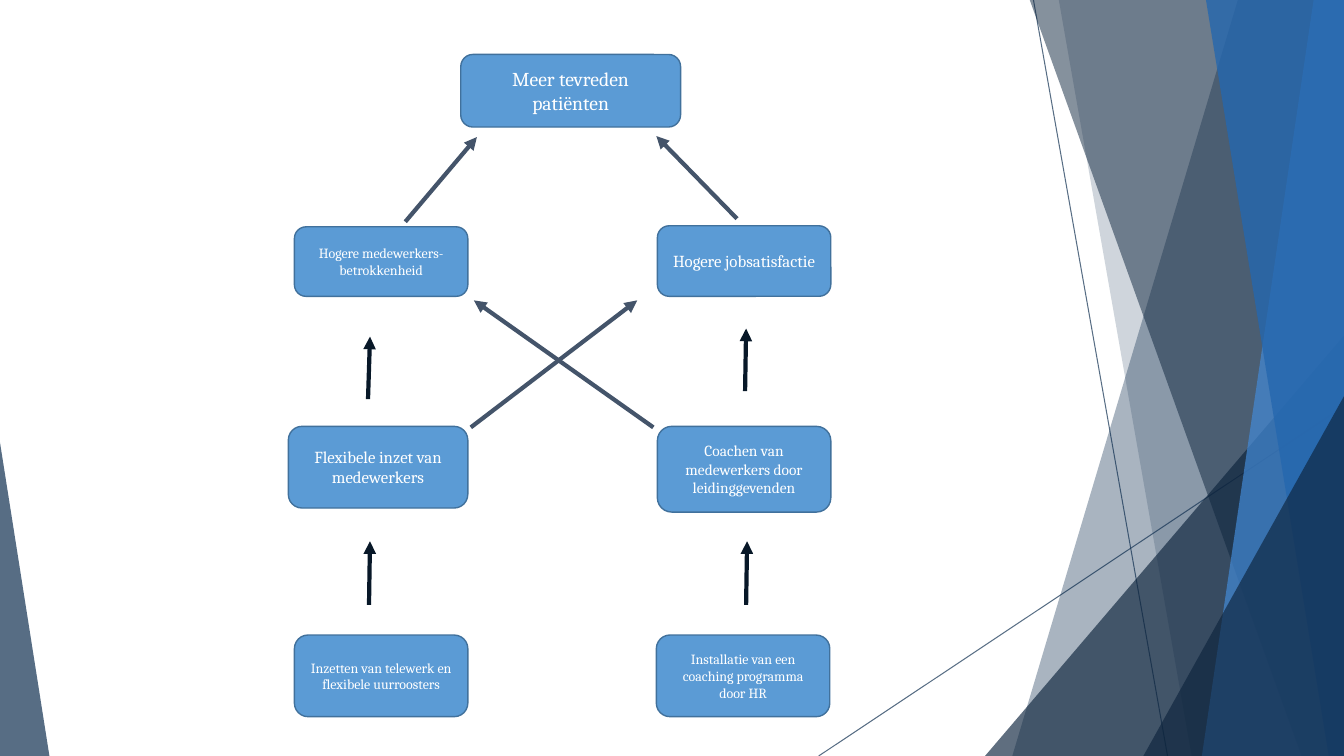
from lxml import etree
from pptx import Presentation
from pptx.dml.color import RGBColor
from pptx.enum.shapes import MSO_CONNECTOR, MSO_SHAPE
from pptx.enum.text import MSO_ANCHOR, PP_ALIGN
from pptx.oxml.ns import qn
from pptx.util import Inches, Pt

ROUNDED = MSO_SHAPE.ROUNDED_RECTANGLE
TRIANGLE = MSO_SHAPE.ISOSCELES_TRIANGLE
STRAIGHT = MSO_CONNECTOR.STRAIGHT
MIDDLE = MSO_ANCHOR.MIDDLE
CENTER = PP_ALIGN.CENTER

WIDTH, HEIGHT = 13.33, 7.5
THEME = {
    "font": "Cambria", "text": "FFFFFF",
    "box": "5B9BD5", "box_line": "41719C", "box_weight": 1,
    "diagonal": "44546A", "upright": "081828", "arrow_weight": 3,
    "slate": "113051", "navy": "0D243D", "sky": "438AD7", "blue": "2567AE",
    "hairline": 0.75, "hairline_alpha": 70,
    "large": 14, "medium": 12, "small": 11, "tiny": 10,
}

# text, size, left, top, width, height
BOXES = [
    ("Meer tevreden patiënten", "large", 4.57, 0.54, 2.18, 0.72),
    ("Hogere medewerkers-betrokkenheid", "tiny", 2.92, 2.25, 1.72, 0.69),
    ("Hogere jobsatisfactie", "medium", 6.52, 2.24, 1.72, 0.7),
    ("Flexibele inzet van medewerkers", "medium", 2.86, 4.23, 1.78, 0.81),
    ("Coachen van medewerkers door leidinggevenden", "small", 6.52, 4.23, 1.72, 0.85),
    ("Inzetten van telewerk en flexibele uurroosters", "tiny", 2.92, 6.3, 1.72, 0.81),
    ("Installatie van een coaching programma door HR", "tiny", 6.51, 6.3, 1.72, 0.81),
]

# colour, start, end
ARROWS = [
    ("diagonal", (4.02, 2.2), (4.73, 1.36)),
    ("diagonal", (7.31, 2.17), (6.51, 1.35)),
    ("diagonal", (4.67, 4.24), (6.32, 2.98)),
    ("diagonal", (6.48, 4.24), (4.7, 2.98)),
    ("upright", (3.65, 3.96), (3.67, 3.34)),
    ("upright", (7.39, 3.88), (7.4, 3.26)),
    ("upright", (3.66, 6), (3.67, 5.37)),
    ("upright", (7.4, 6), (7.41, 5.37)),
]

HAIRLINES = [((10.25, 0), (11.58, HEIGHT)), ((WIDTH, 4.03), (8.12, HEIGHT))]

# Back to front. A band runs to the right edge: colour, alpha, top x, bottom x.
# A wedge stands on the bottom edge: colour, alpha, left, top, width, apex.
BANDS_BACK = [("slate", 36, 12.28, 10.04), ("slate", 20, 10.5, 11.82)]
WEDGE_BACK = ("navy", 66, 9.77, 3.33, 3.56, 1)
BANDS_FRONT = [
    ("navy", 50, 10.21, 12.91),
    ("sky", 70, 13.03, 11.92),
    ("blue", 80, 11.96, 13.18),
]
WEDGES_FRONT = [("navy", 66, 11.34, 3.93, 1.99, 1), ("slate", 70, 0, 4.39, 0.49, 0)]


def rgb(name):
    return RGBColor.from_string(THEME[name])


def set_alpha(element, percent):
    """Make the first solid colour below element partly transparent."""
    colour = element.find(".//" + qn("a:srgbClr"))
    etree.SubElement(colour, qn("a:alpha"), val=str(percent * 1000))


def paint_panel(panel, colour, alpha):
    panel.shadow.inherit = False
    panel.fill.solid()
    panel.fill.fore_color.rgb = rgb(colour)
    panel.line.fill.background()
    set_alpha(panel.fill._xPr, alpha)


def add_band(shapes, colour, alpha, top_x, bottom_x):
    corners = [(top_x, -0.01), (WIDTH, -0.01), (WIDTH, HEIGHT), (bottom_x, HEIGHT)]
    points = [(Inches(x), Inches(y)) for x, y in corners]
    outline = shapes.build_freeform(*points[0])
    outline.add_line_segments(points[1:], close=True)
    paint_panel(outline.convert_to_shape(), colour, alpha)


def add_wedge(shapes, colour, alpha, left, top, width, apex):
    wedge = shapes.add_shape(
        TRIANGLE, Inches(left), Inches(top), Inches(width), Inches(HEIGHT - top))
    wedge.adjustments[0] = apex
    paint_panel(wedge, colour, alpha)


def add_line(shapes, start, end, colour, weight):
    line = shapes.add_connector(STRAIGHT, *(Inches(v) for v in (*start, *end)))
    line.line.color.rgb = rgb(colour)
    line.line.width = Pt(weight)
    etree.SubElement(line._element.spPr, qn("a:effectLst"))
    return line.line._get_or_add_ln()


def add_box(shapes, text, size, *frame):
    box = shapes.add_shape(ROUNDED, *(Inches(v) for v in frame))
    box.shadow.inherit = False
    box.fill.solid()
    box.fill.fore_color.rgb = rgb("box")
    box.line.color.rgb = rgb("box_line")
    box.line.width = Pt(THEME["box_weight"])
    box.text_frame.text = text
    box.text_frame.word_wrap = True
    box.text_frame.vertical_anchor = MIDDLE
    paragraph = box.text_frame.paragraphs[0]
    paragraph.alignment = CENTER
    font = paragraph.runs[0].font
    font.name = THEME["font"]
    font.size = Pt(THEME[size])
    font.color.rgb = rgb("text")


def main():
    deck = Presentation()
    deck.slide_width, deck.slide_height = Inches(WIDTH), Inches(HEIGHT)
    shapes = deck.slides.add_slide(deck.slide_layouts[6]).shapes

    for start, end in HAIRLINES:
        ln = add_line(shapes, start, end, "slate", THEME["hairline"])
        set_alpha(ln, THEME["hairline_alpha"])
    for band in BANDS_BACK:
        add_band(shapes, *band)
    add_wedge(shapes, *WEDGE_BACK)
    for band in BANDS_FRONT:
        add_band(shapes, *band)
    for wedge in WEDGES_FRONT:
        add_wedge(shapes, *wedge)

    for box in BOXES:
        add_box(shapes, *box)
    for colour, start, end in ARROWS:
        ln = add_line(shapes, start, end, colour, THEME["arrow_weight"])
        etree.SubElement(ln, qn("a:tailEnd"), type="triangle")

    deck.save("out.pptx")


if __name__ == "__main__":
    main()
